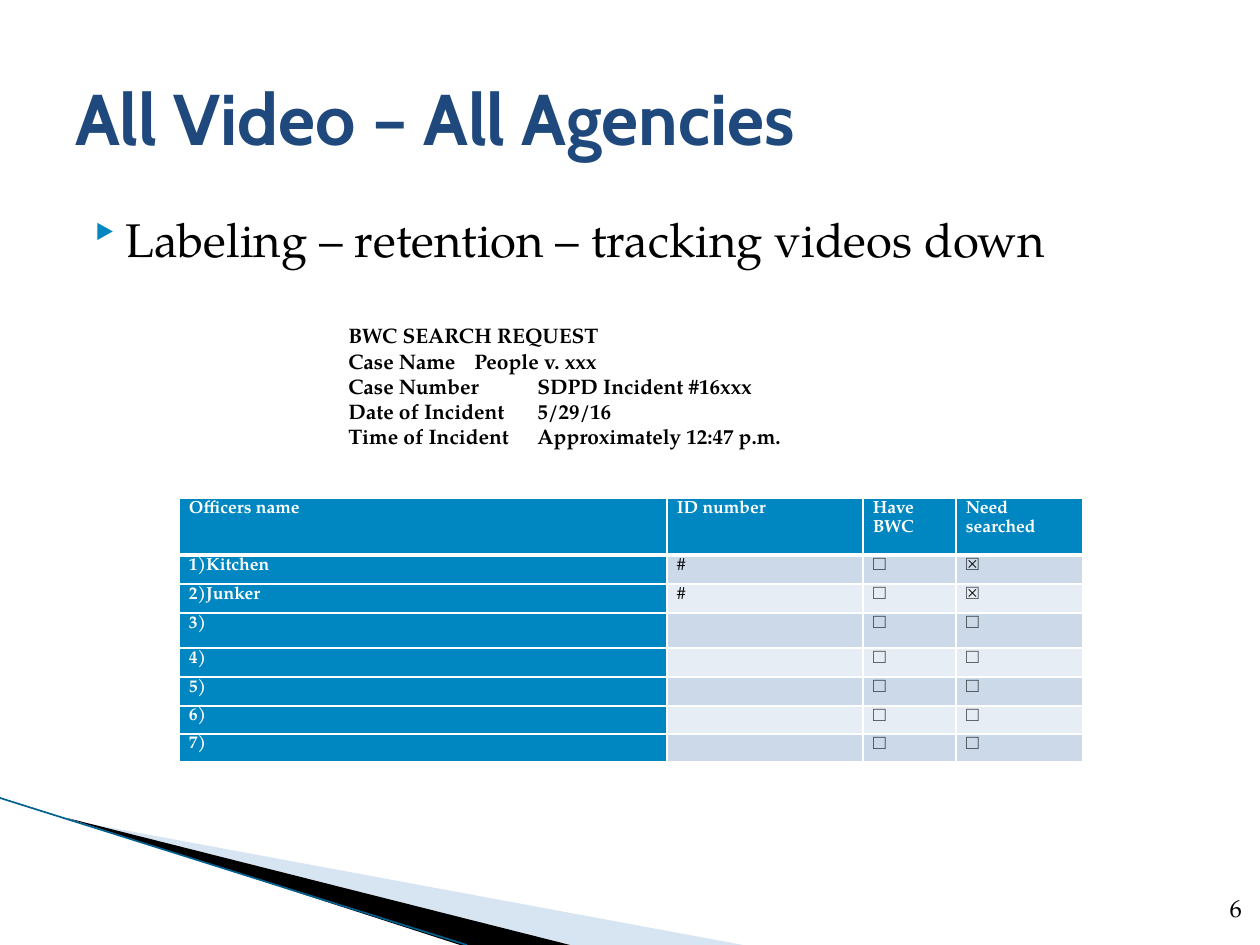
from lxml import etree
from pptx import Presentation
from pptx import util as u
from pptx.dml.color import RGBColor
from pptx.enum import shapes, text
from pptx.oxml import ns

PX = 914400 / 126
SERIF = "TeX Gyre Pagella"
NAVY = RGBColor(0x1F, 0x49, 0x7D)
BLUE = RGBColor(0x00, 0x87, 0xC2)
EDGE_BLUE = RGBColor(0x00, 0x60, 0x90)
SWOOSH_BLUE = RGBColor(0x9D, 0xBD, 0xDE)
BAND_DARK = RGBColor(0xCC, 0xD9, 0xE9)
BAND_LIGHT = RGBColor(0xE7, 0xED, 0xF4)
BLACK = RGBColor(0, 0, 0)
WHITE = RGBColor(0xFF, 0xFF, 0xFF)


def px(*lengths):
    return [u.Emu(round(length * PX)) for length in lengths]


def style(paragraph, size, color, bold=False, font=SERIF):
    for run in paragraph.runs:
        run.font.name = font
        run.font.size = u.Pt(size)
        run.font.bold = bold
        run.font.color.rgb = color


prs = Presentation()
prs.slide_width, prs.slide_height = px(1260, 945)
slide = prs.slides.add_slide(prs.slide_layouts[5])

swooshes = [
    (SWOOSH_BLUE, [(69, 820), (743, 945), (570, 945)]),
    (BLACK, [(67, 818), (570, 945), (460, 945)]),
]
for color, points in swooshes:
    outline = slide.shapes.build_freeform(*points[0], scale=PX)
    outline.add_line_segments(points[1:], close=True)
    swoosh = outline.convert_to_shape()
    swoosh.shadow.inherit = False
    swoosh.line.fill.background()
    swoosh.fill.solid()
    swoosh.fill.fore_color.rgb = color
    if color == SWOOSH_BLUE:
        tint = swoosh.fill._xPr.find(".//" + ns.qn("a:srgbClr"))
        etree.SubElement(tint, ns.qn("a:alpha"), val="40000")

edge = slide.shapes.add_connector(shapes.MSO_CONNECTOR.STRAIGHT, *px(0, 798, 467, 945))
edge.line.color.rgb = EDGE_BLUE
edge.line.width = u.Pt(0.95)
etree.SubElement(edge._element.spPr, ns.qn("a:effectLst"))

title = slide.shapes.title
title.left, title.top, title.width, title.height = px(63, 38, 1134, 158)
title.text_frame.text = "All Video – All Agencies"
title.text_frame.vertical_anchor = text.MSO_ANCHOR.MIDDLE
title.text_frame.paragraphs[0].alignment = text.PP_ALIGN.LEFT
style(title.text_frame.paragraphs[0], 41, NAVY, True, "Cabin")

body = slide.shapes.add_textbox(*px(63, 204, 1134, 624)).text_frame
body.word_wrap = True
body.text = "Labeling – retention – tracking videos down"
bullet = body.paragraphs[0]
bullet_props = bullet._p.get_or_add_pPr()
left_margin, hanging = px(50, -35)
bullet_props.set("marL", str(left_margin))
bullet_props.set("indent", str(hanging))
bullet_color = etree.SubElement(bullet_props, ns.qn("a:buClr"))
etree.SubElement(bullet_color, ns.qn("a:srgbClr"), val=str(BLUE))
etree.SubElement(bullet_props, ns.qn("a:buChar"), char="‣")
style(bullet, 27, BLACK)

page_number = slide.shapes.add_textbox(*px(1176, 883, 66, 50)).text_frame
page_number.word_wrap = True
page_number.vertical_anchor = text.MSO_ANCHOR.MIDDLE
page_number.margin_right = 0
page_number.text = "6"
page_number.paragraphs[0].alignment = text.PP_ALIGN.RIGHT
style(page_number.paragraphs[0], 14, BLACK)

request = slide.shapes.add_textbox(*px(273, 315, 713, 178)).text_frame
request.word_wrap = True
request.margin_top, = px(8)
request.text = "\n".join([
    "BWC SEARCH REQUEST",
    "Case Name\tPeople v. xxx",
    "Case Number\tSDPD Incident #16xxx",
    "Date of Incident\t5/29/16",
    "Time of Incident\tApproximately 12:47 p.m.",
])
first_indent, value_stop = px(63, 251)
for paragraph in request.paragraphs:
    props = paragraph._p.get_or_add_pPr()
    props.set("marL", "0")
    props.set("indent", str(first_indent))
    tabs = etree.SubElement(props, ns.qn("a:tabLst"))
    etree.SubElement(tabs, ns.qn("a:tab"), pos=str(value_stop), algn="l")
    style(paragraph, 12, BLACK, True)

officers = [
    ("Officers name", "ID number", "Have BWC", "Need searched"),
    ("1)Kitchen", "#", "☐", "☒"),
    ("2)Junker", "#", "☐", "☒"),
] + [(f"{number})", "", "☐", "☐") for number in range(3, 8)]
column_widths = px(488, 196, 93, 127)
row_heights = px(57, 29, 29, 35, 29, 29, 28, 28)
table = slide.shapes.add_table(8, 4, *px(179, 498, 904, 264)).table
for column, width in zip(table.columns, column_widths):
    column.width = width
for row, height in zip(table.rows, row_heights):
    row.height = height

for r, officer in enumerate(officers):
    for c, entry in enumerate(officer):
        cell = table.cell(r, c)
        heading = r == 0 or c == 0
        cell.margin_left, cell.margin_right = px(10, 10)
        cell.margin_top = cell.margin_bottom = 0
        cell.text_frame.text = entry
        paragraph = cell.text_frame.paragraphs[0]
        paragraph.line_spacing = 1.15
        style(paragraph, 10, WHITE if heading else BLACK, heading)
        if not entry:
            etree.SubElement(paragraph._p, ns.qn("a:endParaRPr"), sz="1000")
        cell_props = cell._tc.get_or_add_tcPr()
        for side in "LRTB":
            thick = (r, side) in ((0, "B"), (1, "T"))
            border = etree.SubElement(cell_props, ns.qn(f"a:ln{side}"),
                                      w=str(u.Pt(3 if thick else 1)))
            border_fill = etree.SubElement(border, ns.qn("a:solidFill"))
            etree.SubElement(border_fill, ns.qn("a:srgbClr"), val=str(WHITE))
        cell.fill.solid()
        band = BAND_DARK if r % 2 else BAND_LIGHT
        cell.fill.fore_color.rgb = BLUE if heading else band

prs.save("out.pptx")
